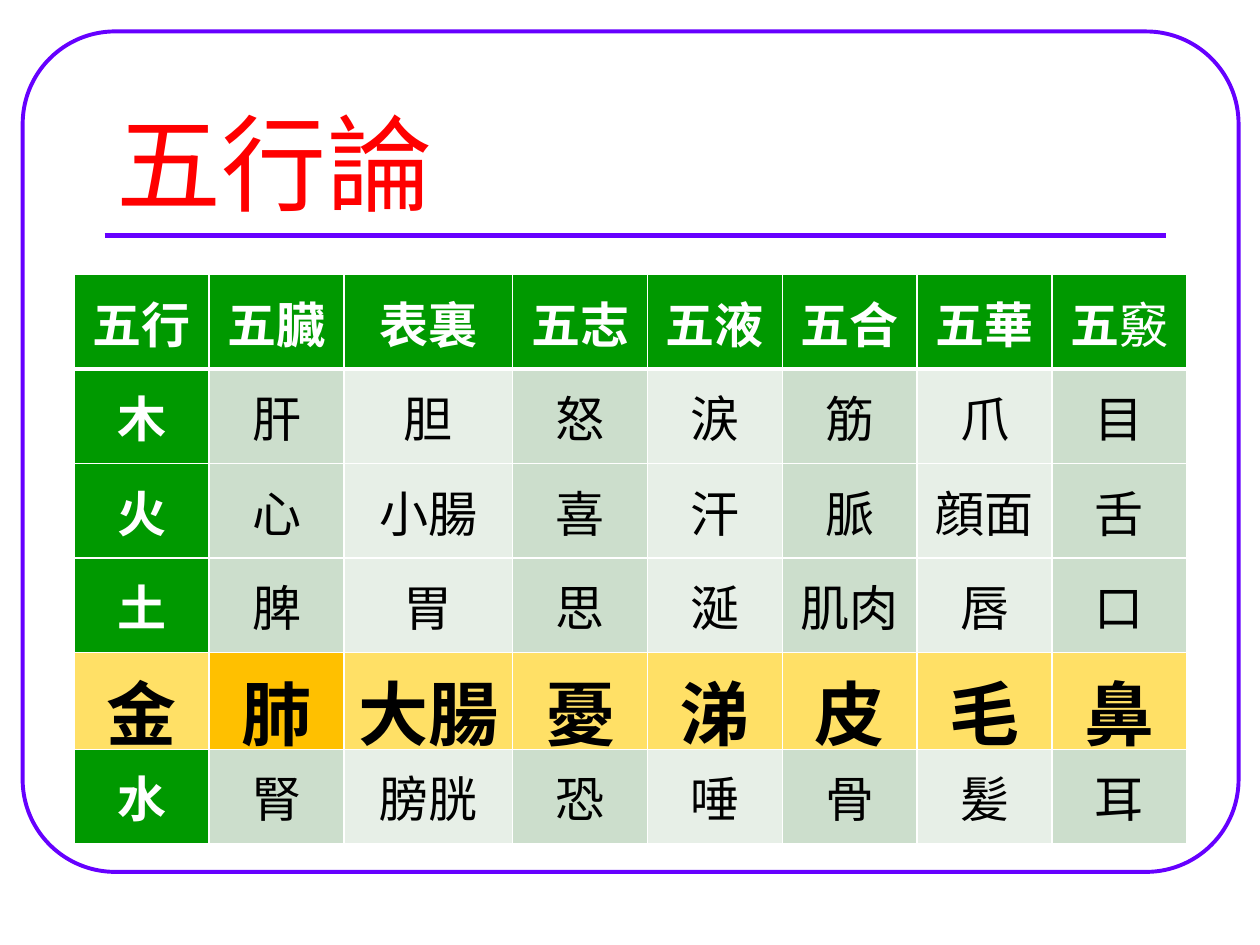
from dataclasses import dataclass

from lxml import etree
from pptx import Presentation
from pptx.dml.color import RGBColor
from pptx.enum.shapes import MSO_CONNECTOR, MSO_SHAPE
from pptx.enum.text import MSO_ANCHOR, PP_ALIGN
from pptx.oxml.ns import qn
from pptx.util import Inches, Pt

STRAIGHT = MSO_CONNECTOR.STRAIGHT
ROUNDED_RECTANGLE = MSO_SHAPE.ROUNDED_RECTANGLE
BOTTOM, MIDDLE = MSO_ANCHOR.BOTTOM, MSO_ANCHOR.MIDDLE
CENTER = PP_ALIGN.CENTER

COLORS = {
    "violet": "6600FF",
    "red": "FF0000",
    "white": "FFFFFF",
    "black": "000000",
    "green": "009900",
    "green_tint": "CCDECC",
    "pale_tint": "E7EFE7",
    "yellow": "FFE066",
    "amber": "FFC000",
}
ROWS = [
    ["五行", "五臓", "表裏", "五志", "五液", "五合", "五華", "五"],
    ["木", "肝", "胆", "怒", "涙", "筋", "爪", "目"],
    ["火", "心", "小腸", "喜", "汗", "脈", "顔面", "舌"],
    ["土", "脾", "胃", "思", "涎", "肌肉", "唇", "口"],
    ["金", "肺", "大腸", "憂", "涕", "皮", "毛", "鼻"],
    ["水", "腎", "膀胱", "恐", "唾", "骨", "髪", "耳"],
]
HIGHLIGHT_ROW = 4
WIDE_COLUMN = 2
COLUMN_WIDTH = 1.07
WIDE_COLUMN_WIDTH = 1.34
ROW_HEIGHT = 0.75


@dataclass
class CellStyle:
    fill: str
    text: str
    size: int
    bold: bool


def color(name: str) -> RGBColor:
    return RGBColor.from_string(COLORS[name])


def cell_style(row: int, column: int) -> CellStyle:
    if row == HIGHLIGHT_ROW:
        return CellStyle("amber" if column == 1 else "yellow", "black", 40, True)
    if row == 0 or column == 0:
        return CellStyle("green", "white", 28, True)
    return CellStyle("green_tint" if column % 2 else "pale_tint", "black", 28, False)


def set_borders(cell, row: int) -> None:
    widths = {"lnL": 1, "lnR": 1, "lnT": 3 if row == 1 else 1, "lnB": 3 if row == 0 else 1}
    properties = cell._tc.get_or_add_tcPr()
    for tag, width in widths.items():
        border = etree.SubElement(properties, qn(f"a:{tag}"), w=str(Pt(width)))
        fill = etree.SubElement(border, qn("a:solidFill"))
        etree.SubElement(fill, qn("a:srgbClr"), val=COLORS["white"])


def fill_cell(cell, text: str, row: int, column: int) -> None:
    style = cell_style(row, column)
    set_borders(cell, row)
    cell.fill.solid()
    cell.fill.fore_color.rgb = color(style.fill)
    cell.vertical_anchor = MIDDLE
    paragraph = cell.text_frame.paragraphs[0]
    paragraph.alignment = CENTER
    run = paragraph.add_run()
    run.text = text
    run.font.bold = style.bold
    paragraph.font.name = "Arial"
    paragraph.font.size = Pt(style.size)
    paragraph.font.color.rgb = color(style.text)


def add_frame(slide) -> None:
    frame = slide.shapes.add_shape(
        ROUNDED_RECTANGLE, Inches(0.18), Inches(0.25), Inches(9.65), Inches(6.67)
    )
    frame.adjustments[0] = 0.11
    frame.shadow.inherit = False
    frame.fill.background()
    frame.line.color.rgb = color("violet")
    frame.line.width = Pt(2.25)


def add_title(slide) -> None:
    rule = slide.shapes.add_connector(
        STRAIGHT, Inches(0.83), Inches(1.87), Inches(9.25), Inches(1.87)
    )
    rule.line.color.rgb = color("violet")
    rule.line.width = Pt(3)
    etree.SubElement(rule._element.spPr, qn("a:effectLst"))

    title = slide.shapes.add_textbox(Inches(0.83), Inches(0.58), Inches(8.42), Inches(1.25))
    text_frame = title.text_frame
    text_frame.word_wrap = True
    text_frame.vertical_anchor = BOTTOM
    paragraph = text_frame.paragraphs[0]
    paragraph.text = "五行論"
    paragraph.font.name = "Montserrat"
    paragraph.font.size = Pt(60)
    paragraph.font.color.rgb = color("red")


def add_elements_table(slide) -> None:
    widths = [COLUMN_WIDTH] * len(ROWS[0])
    widths[WIDE_COLUMN] = WIDE_COLUMN_WIDTH
    table = slide.shapes.add_table(
        len(ROWS), len(widths), Inches(0.59), Inches(2.18),
        Inches(sum(widths)), Inches(ROW_HEIGHT * len(ROWS)),
    ).table
    table.first_col = True
    table.horz_banding = False
    for column, width in zip(table.columns, widths):
        column.width = Inches(width)
    for row, texts in enumerate(ROWS):
        table.rows[row].height = Inches(ROW_HEIGHT)
        for column, text in enumerate(texts):
            fill_cell(table.cell(row, column), text, row, column)
    light_run = table.cell(0, len(widths) - 1).text_frame.paragraphs[0].add_run()
    light_run.text = "竅"
    light_run.font.bold = False


def main() -> None:
    presentation = Presentation()
    presentation.slide_width = Inches(10)
    presentation.slide_height = Inches(7.5)
    slide = presentation.slides.add_slide(presentation.slide_layouts[6])
    add_frame(slide)
    add_title(slide)
    add_elements_table(slide)
    presentation.save("out.pptx")


if __name__ == "__main__":
    main()
